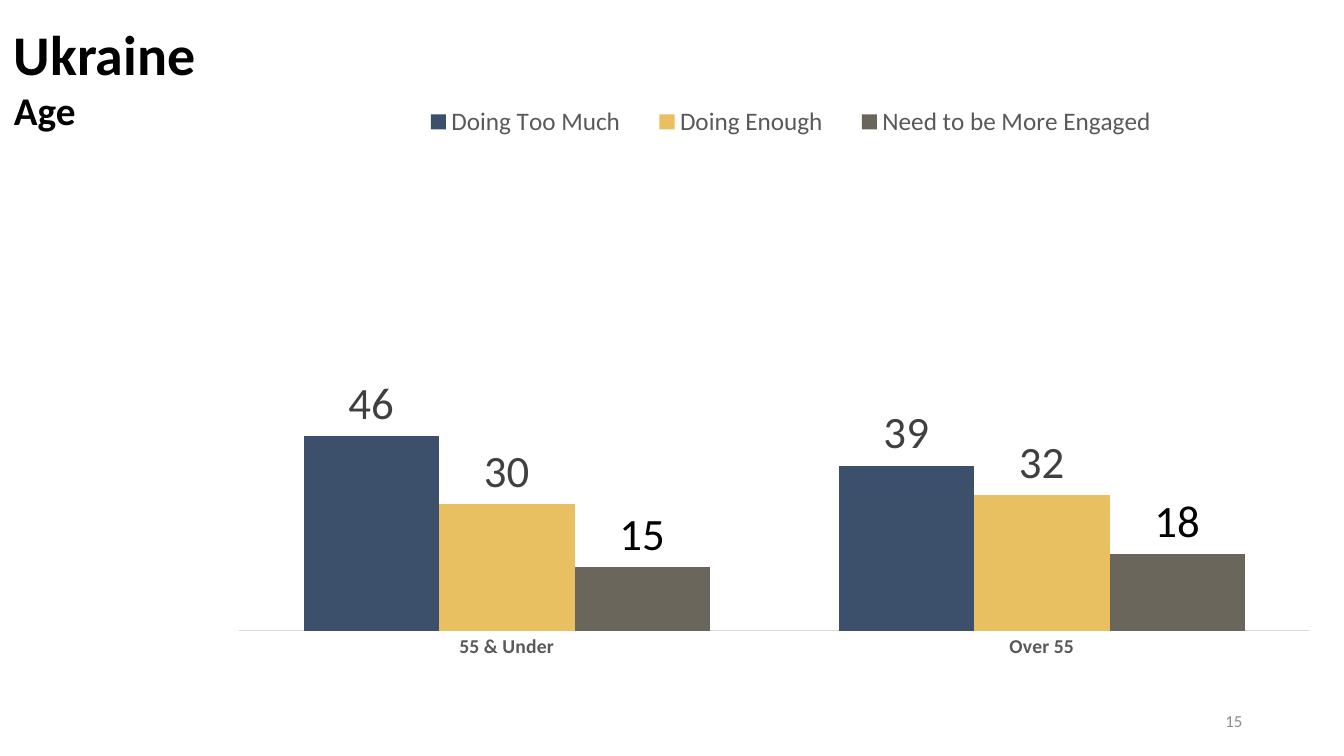
from dataclasses import dataclass

from pptx import Presentation
from pptx.chart.chart import Chart
from pptx.chart.data import CategoryChartData
from pptx.dml.color import RGBColor
from pptx.enum.chart import (XL_CHART_TYPE as ChartType, XL_LABEL_POSITION as LabelPosition,
                             XL_LEGEND_POSITION as LegendPosition, XL_TICK_MARK as TickMark)
from pptx.enum.text import MSO_ANCHOR as Anchor, PP_ALIGN as Align
from pptx.oxml import parse_xml
from pptx.oxml.ns import nsdecls
from pptx.slide import Slide
from pptx.text.text import Font
from pptx.util import Inches, Pt

SLIDE_WIDTH, SLIDE_HEIGHT = Inches(13.33), Inches(7.5)
FONT_NAME = "Calibri"

BLACK = RGBColor(0x00, 0x00, 0x00)
NAVY = RGBColor(0x3C, 0x4F, 0x6B)
GOLD = RGBColor(0xE8, 0xC0, 0x62)
STONE = RGBColor(0x6B, 0x66, 0x5B)
DARK_GREY = RGBColor(0x40, 0x40, 0x40)
MID_GREY = RGBColor(0x59, 0x59, 0x59)
PAGE_GREY = RGBColor(0x8C, 0x8C, 0x8C)
AXIS_GREY = RGBColor(0xD9, 0xD9, 0xD9)


@dataclass(frozen=True)
class Area:
    """Shares of the slide's width and height."""
    left: float
    top: float
    width: float
    height: float

    def box(self) -> tuple[int, int, int, int]:
        return (int(self.left * SLIDE_WIDTH), int(self.top * SLIDE_HEIGHT),
                int(self.width * SLIDE_WIDTH), int(self.height * SLIDE_HEIGHT))


@dataclass(frozen=True)
class Line:
    text: str
    size: int
    color: RGBColor = BLACK
    bold: bool = False


@dataclass(frozen=True)
class Caption:
    area: Area
    lines: tuple[Line, ...]
    align: Align = Align.LEFT
    anchor: Anchor = Anchor.TOP


@dataclass(frozen=True)
class Opinion:
    name: str
    shares: tuple[int, ...]
    fill: RGBColor
    label_color: RGBColor


AGE_GROUPS = ("55 & Under", "Over 55")
OPINIONS = (
    Opinion("Doing Too Much", (46, 39), NAVY, DARK_GREY),
    Opinion("Doing Enough", (30, 32), GOLD, DARK_GREY),
    Opinion("Need to be More Engaged", (15, 18), STONE, BLACK),
)
CHART_AREA = Area(2.22 / 13.33, 0.53 / 7.5, 10.92 / 13.33, 6.18 / 7.5)
CAPTIONS = (
    Caption(Area(0.04 / 13.33, 0.14 / 7.5, 8.26 / 13.33, 1.92 / 7.5),
            (Line("Ukraine", 40, bold=True), Line("Age", 28, bold=True))),
    Caption(Area(9.42 / 13.33, 6.95 / 7.5, 3 / 13.33, 0.4 / 7.5),
            (Line("15", 12, PAGE_GREY),), Align.RIGHT, Anchor.MIDDLE),
)


def style_font(font: Font, size: int, color: RGBColor, bold: bool = False) -> None:
    font.name = FONT_NAME
    font.size = Pt(size)
    font.bold = bold
    font.color.rgb = color


def add_caption(slide: Slide, caption: Caption) -> None:
    frame = slide.shapes.add_textbox(*caption.area.box()).text_frame
    frame.word_wrap = True
    frame.vertical_anchor = caption.anchor
    frame.text = "\n".join(line.text for line in caption.lines)
    for paragraph, line in zip(frame.paragraphs, caption.lines):
        paragraph.alignment = caption.align
        style_font(paragraph.runs[0].font, line.size, line.color, line.bold)


def place_part(chart: Chart, part: str, index: int, x: float, y: float,
               width: float, height: float, target: str = "") -> None:
    """Set the manual layout of a chart part, in shares of the chart."""
    element = chart.element.xpath(f".//c:{part}")[0]
    for old_layout in element.xpath("./c:layout"):
        element.remove(old_layout)
    element.insert(index, parse_xml(
        f'<c:layout {nsdecls("c")}><c:manualLayout>{target}'
        '<c:xMode val="edge"/><c:yMode val="edge"/>'
        f'<c:x val="{x}"/><c:y val="{y}"/><c:w val="{width}"/><c:h val="{height}"/>'
        '</c:manualLayout></c:layout>'))


def add_opinion_chart(slide: Slide) -> None:
    data = CategoryChartData()
    data.categories = AGE_GROUPS
    for opinion in OPINIONS:
        data.add_series(opinion.name, opinion.shares)
    chart = slide.shapes.add_chart(
        ChartType.COLUMN_CLUSTERED, *CHART_AREA.box(), data).chart
    chart.has_title = False
    style_font(chart.font, 10, BLACK)

    # Columns and their values
    plot = chart.plots[0]
    plot.gap_width = 95
    plot.overlap = 0
    plot.vary_by_categories = False
    for series, opinion in zip(plot.series, OPINIONS):
        series.format.fill.solid()
        series.format.fill.fore_color.rgb = opinion.fill
        labels = series.data_labels
        labels.show_value = True
        labels.position = LabelPosition.OUTSIDE_END
        style_font(labels.font, 32, opinion.label_color)

    # Axes
    ages = chart.category_axis
    ages.major_tick_mark = ages.minor_tick_mark = TickMark.NONE
    ages.format.line.color.rgb = AXIS_GREY
    ages.format.line.width = Pt(0.75)
    style_font(ages.tick_labels.font, 14, MID_GREY, bold=True)
    percent = chart.value_axis
    percent.minimum_scale, percent.maximum_scale = 0, 100
    percent.has_major_gridlines = False
    percent.visible = False

    # Legend and layout
    chart.has_legend = True
    chart.legend.position = LegendPosition.TOP
    chart.legend.include_in_layout = False
    style_font(chart.legend.font, 18, MID_GREY)
    place_part(chart, "legend", 1, 0.16, 0.07, 0.71, 0.08)
    place_part(chart, "plotArea", 0, 0.014, 0.247, 0.972, 0.68,
               '<c:layoutTarget val="inner"/>')


def main() -> None:
    presentation = Presentation()
    presentation.slide_width, presentation.slide_height = SLIDE_WIDTH, SLIDE_HEIGHT
    slide = presentation.slides.add_slide(presentation.slide_layouts[6])
    add_opinion_chart(slide)
    for caption in CAPTIONS:
        add_caption(slide, caption)
    presentation.save("out.pptx")


if __name__ == "__main__":
    main()
